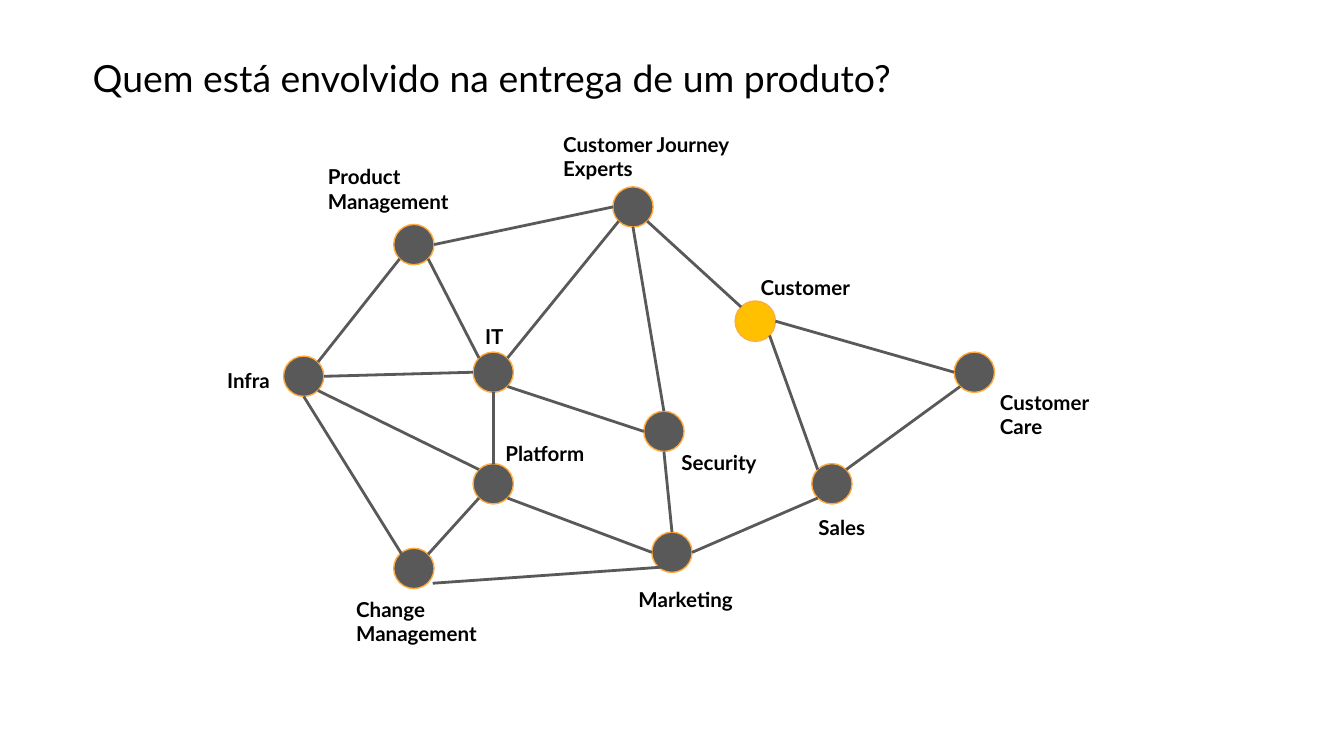
from pptx import Presentation
from pptx.dml.color import RGBColor
from pptx.enum.shapes import MSO_CONNECTOR, MSO_SHAPE
from pptx.enum.text import MSO_ANCHOR
from pptx.oxml.ns import qn
from pptx.util import Inches, Pt
from lxml import etree

OVAL = MSO_SHAPE.OVAL
LINE = MSO_CONNECTOR.STRAIGHT
TOP, MIDDLE = MSO_ANCHOR.TOP, MSO_ANCHOR.MIDDLE

COLORS = {"ink": "000000", "node": "595959", "focus": "FFC000", "rim": "FFAB40"}
FONT = "Lato"
WIDTH = 10
SIZE = 0.3  # node diameter

TITLE = "Quem está envolvido na entrega de um produto?"

# name: (node left, top), (label left, top, width, height)
NODES = {
    "Product Management": ((2.93, 1.67), (2.41, 1.19, 1.5, 0.24)),
    "Customer Journey Experts": ((4.56, 1.39), (4.16, 0.95, 1.82, 0.24)),
    "Customer": ((5.47, 2.24), (5.63, 2.02, 0.84, 0.24)),
    "Customer Care": ((7.1, 2.62), (7.41, 2.87, 1.05, 0.24)),
    "Sales": ((6.04, 3.45), (6.06, 3.8, 0.48, 0.24)),
    "Marketing": ((4.85, 3.96), (4.72, 4.34, 0.79, 0.24)),
    "Security": ((4.79, 3.06), (5.04, 3.32, 0.68, 0.41)),
    "IT": ((3.52, 2.62), (3.58, 2.38, 0.31, 0.24)),
    "Platform": ((3.52, 3.45), (3.73, 3.25, 0.68, 0.41)),
    "Change Management": ((2.93, 4.08), (2.62, 4.41, 1.14, 0.41)),
    "Infra": ((2.11, 2.65), (1.66, 2.71, 0.48, 0.24)),
}
FOCUS = "Customer"

# from node, compass side, to node, compass side
LINKS = [
    ("Infra", "NE", "Product Management", "SW"),
    ("Product Management", "E", "Customer Journey Experts", "W"),
    ("Product Management", "SE", "IT", "NW"),
    ("Infra", "E", "IT", "W"),
    ("Infra", "SE", "Platform", "NW"),
    ("Platform", "N", "IT", "S"),
    ("Change Management", "NE", "Platform", "SW"),
    ("Platform", "SE", "Marketing", "W"),
    ("Security", "S", "Marketing", "N"),
    ("IT", "SE", "Security", "W"),
    ("Customer Journey Experts", "S", "Security", "N"),
    ("Customer Journey Experts", "SW", "IT", "NE"),
    ("Customer Journey Experts", "SE", "Customer", "NW"),
    ("Customer Care", "W", "Customer", "E"),
    ("Sales", "NW", "Customer", "SE"),
    ("Sales", "SW", "Marketing", "E"),
    ("Sales", "NE", "Customer Care", "SW"),
]
# lines whose ends lie off the compass points
LOOSE = [((2.26, 2.95), (3.08, 4.27)), ((3.22, 4.34), (4.93, 4.22))]


def rgb(key):
    return RGBColor.from_string(COLORS[key])


def site(name, side):
    """Point on the rim of a node, in inches."""
    (left, top), _ = NODES[name]
    reach = SIZE / 2 * (0.5 ** 0.5 if len(side) == 2 else 1)
    x = ("E" in side) - ("W" in side)
    y = ("S" in side) - ("N" in side)
    return left + SIZE / 2 + x * reach, top + SIZE / 2 + y * reach


def add_node(slide, name, spot):
    node = slide.shapes.add_shape(OVAL, *map(Inches, (*spot, SIZE, SIZE)))
    node.shadow.inherit = False
    node.fill.solid()
    node.fill.fore_color.rgb = rgb("focus" if name == FOCUS else "node")
    node.line.color.rgb = rgb("rim")
    node.line.width = Pt(0.75)


def add_link(slide, start, end):
    link = slide.shapes.add_connector(LINE, *map(Inches, (*start, *end)))
    link.line.color.rgb = rgb("node")
    link.line.width = Pt(1.5)
    etree.SubElement(link._element.spPr, qn("a:effectLst"))


def add_text(slide, text, place, size, bold, inset, anchor):
    box = slide.shapes.add_textbox(*map(Inches, place))
    frame = box.text_frame
    edges = dict.fromkeys(
        ("margin_left", "margin_top", "margin_right", "margin_bottom"), Inches(inset))
    for key, value in {**edges, "word_wrap": True, "vertical_anchor": anchor}.items():
        setattr(frame, key, value)
    run = frame.paragraphs[0].add_run()
    run.text = text
    for key, value in {"name": FONT, "size": Pt(size), "bold": bold}.items():
        setattr(run.font, key, value)
    run.font.color.rgb = rgb("ink")


def main():
    deck = Presentation()
    deck.slide_width, deck.slide_height = Inches(WIDTH), Inches(WIDTH * 9 / 16)
    slide = deck.slides.add_slide(deck.slide_layouts[6])

    add_text(slide, TITLE, (0.69, 0.23, 8.6, 0.7), 20, False, 0, MIDDLE)
    for name, (spot, _) in NODES.items():
        add_node(slide, name, spot)
    ends = [(site(a, p), site(b, q)) for a, p, b, q in LINKS]
    for start, end in ends + LOOSE:
        add_link(slide, start, end)
    for name, (_, place) in NODES.items():
        add_text(slide, name, place, 11, True, 0.03, TOP)

    deck.save("out.pptx")


if __name__ == "__main__":
    main()
